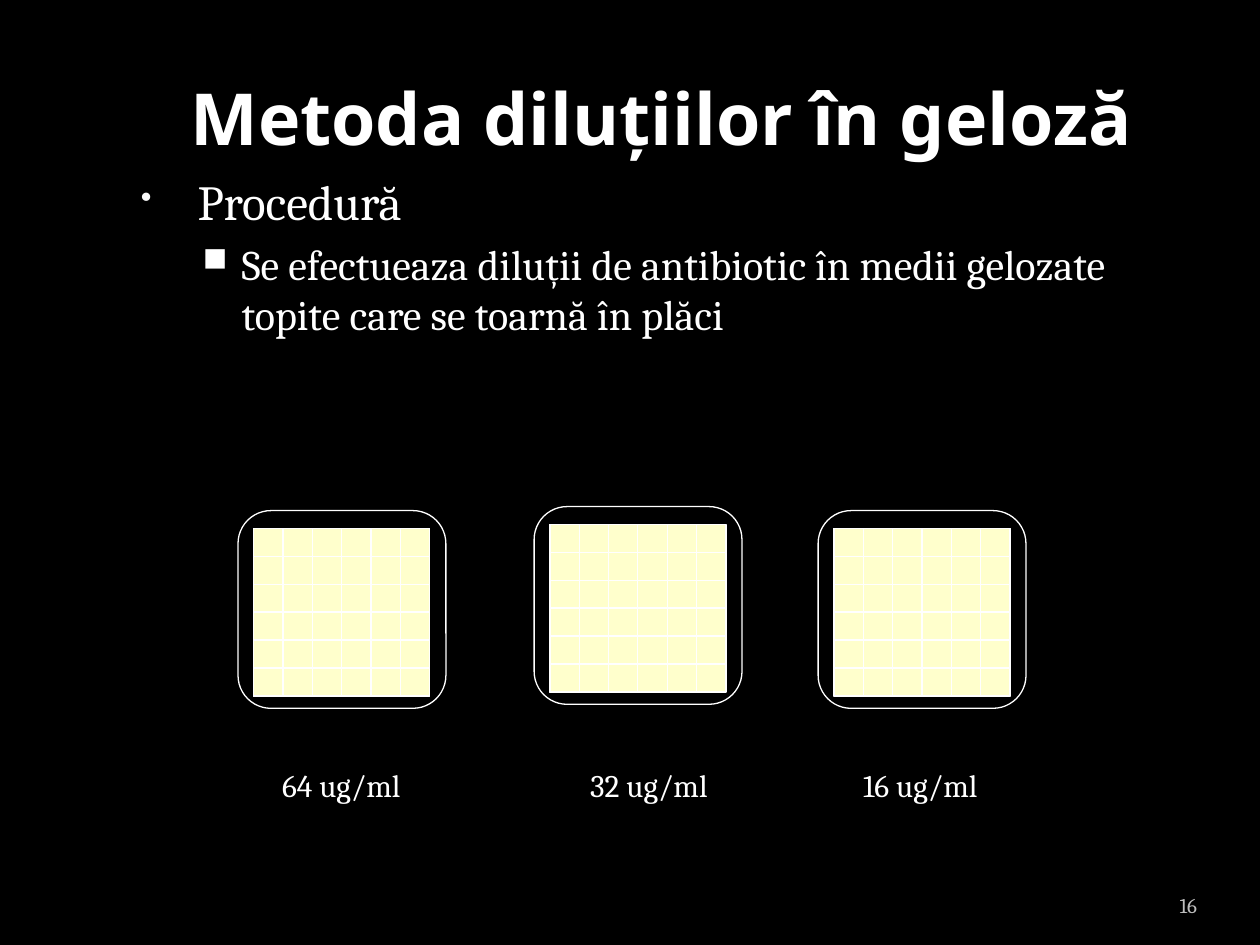
from lxml import etree
from pptx import Presentation
from pptx.dml.color import RGBColor
from pptx.enum import shapes, text
from pptx.oxml import ns
from pptx.util import Pt

COLORS = {"background": "000000", "ink": "FFFFFF", "bullet": "F9F9F9",
          "agar": "FFFFCC", "page": "BDBDBD"}
SERIF, SANS = "Cambria", "Noto Sans"
GRID_CELLS = 6
AGAR_WIDTH, AGAR_HEIGHT = 100.6, 95.8


def rgb(name):
    return RGBColor.from_string(COLORS[name])


def add_property(parent, tag, **attributes):
    """Append a DrawingML child element and return it."""
    return etree.SubElement(parent, ns.qn(tag), attributes)


def style_font(paragraph, size, name=SERIF, color="ink", bold=False):
    font = paragraph.font
    font.size, font.name, font.bold = Pt(size), name, bold
    font.color.rgb = rgb(color)


def add_text_frame(slide, left, top, width, height,
                   anchor=text.MSO_ANCHOR.TOP):
    box = slide.shapes.add_textbox(Pt(left), Pt(top), Pt(width), Pt(height))
    frame = box.text_frame
    frame.word_wrap = True
    frame.vertical_anchor = anchor
    return frame


def add_bullet(paragraph, wording, size, margin, indent, sign, sign_size, color):
    paragraph.text = wording
    paragraph.space_before = Pt(size * 0.2)
    properties = paragraph._p.get_or_add_pPr()
    properties.set("marL", str(Pt(margin)))
    properties.set("indent", str(Pt(indent)))
    bullet_color = add_property(properties, "a:buClr")
    add_property(bullet_color, "a:srgbClr", val=COLORS[color])
    add_property(properties, "a:buSzPct", val=str(sign_size * 1000))
    add_property(properties, "a:buChar", char=sign)
    style_font(paragraph, size)


def add_panel(group, preset, left, top, width, height, fill=None):
    """Add an outlined shape, hollow when no fill is given."""
    panel = group.shapes.add_shape(preset, Pt(left), Pt(top), Pt(width), Pt(height))
    panel.shadow.inherit = False
    if fill:
        panel.fill.solid()
        panel.fill.fore_color.rgb = rgb(fill)
    else:
        panel.fill.background()
    panel.line.color.rgb = rgb("ink")
    panel.line.width = Pt(0.75)
    return panel


def add_grid_line(group, x1, y1, x2, y2):
    line = group.shapes.add_connector(
        shapes.MSO_CONNECTOR.STRAIGHT, Pt(x1), Pt(y1), Pt(x2), Pt(y2))
    line.line.color.rgb = rgb("ink")
    line.line.width = Pt(0.75)
    add_property(line._element.spPr, "a:effectLst")
    return line


def add_plate(slide, left, top):
    """Draw a culture plate: rounded dish, agar and its inoculation grid."""
    group = slide.shapes.add_group_shape()
    add_panel(group, shapes.MSO_SHAPE.ROUNDED_RECTANGLE,
              left, top, 118.8, 113, "background")
    x, y = left + 9, top + 10.1
    right, bottom = x + AGAR_WIDTH, y + AGAR_HEIGHT
    agar = add_panel(group, shapes.MSO_SHAPE.RECTANGLE,
                     x, y, AGAR_WIDTH, AGAR_HEIGHT, "agar")
    offset = (AGAR_WIDTH - AGAR_HEIGHT) / 2
    frame = add_panel(group, shapes.MSO_SHAPE.RECTANGLE,
                      x + offset, y - offset, AGAR_HEIGHT, AGAR_WIDTH)
    frame.rotation = 90
    for step in range(1, GRID_CELLS):
        row_y = y + AGAR_HEIGHT * step / GRID_CELLS
        column_x = x + AGAR_WIDTH * step / GRID_CELLS
        row = add_grid_line(group, x, row_y, right, row_y)
        column = add_grid_line(group, column_x, y, column_x, bottom)
        if step * 2 == GRID_CELLS:
            row.begin_connect(agar, 1)
            row.end_connect(agar, 3)
            column.begin_connect(agar, 0)
            column.end_connect(agar, 2)


def add_title(slide):
    frame = add_text_frame(slide, 72, 21.6, 612, 90, text.MSO_ANCHOR.MIDDLE)
    title = frame.paragraphs[0]
    title.text = "Metoda diluțiilor în geloză"
    title.alignment = text.PP_ALIGN.CENTER
    style_font(title, 41, SANS, bold=True)


def add_procedure(slide):
    frame = add_text_frame(slide, 62.6, 94.3, 611.3, 356.4)
    add_bullet(frame.paragraphs[0], "Procedură", 28, 43.2, -32.4, "•", 65, "bullet")
    step = frame.add_paragraph()
    step.level = 1
    add_bullet(step, "Se efectueaza diluții de antibiotic în medii gelozate "
               "topite care se toarnă în plăci", 24, 68.4, -22.3, "■", 80, "ink")


def add_concentrations(slide):
    """Write the three plate labels on one line, spaced by tab stops."""
    frame = add_text_frame(slide, 110.2, 434.2, 493.2, 28.8)
    frame.margin_left = Pt(51)
    labels = frame.paragraphs[0]
    labels.text = "64 ug/ml\t32 ug/ml\t16 ug/ml"
    stops = add_property(labels._p.get_or_add_pPr(), "a:tabLst")
    for position in (176, 332):
        add_property(stops, "a:tab", pos=str(Pt(position)), algn="l")
    style_font(labels, 18)


def add_page_number(slide):
    frame = add_text_frame(slide, 534.2, 491.8, 149.8, 36, text.MSO_ANCHOR.BOTTOM)
    frame.margin_left = frame.margin_right = 0
    number = frame.paragraphs[0]
    number.text = "16"
    number.alignment = text.PP_ALIGN.RIGHT
    style_font(number, 12, color="page")


def main():
    deck = Presentation()
    deck.slide_width, deck.slide_height = Pt(720), Pt(540)
    slide = deck.slides.add_slide(deck.slide_layouts[6])
    slide.background.fill.solid()
    slide.background.fill.fore_color.rgb = rgb("background")
    add_page_number(slide)
    add_title(slide)
    add_procedure(slide)
    for left, top in ((136, 291.8), (305.2, 289.5), (467.5, 291.8)):
        add_plate(slide, left, top)
    add_concentrations(slide)
    deck.save("out.pptx")


if __name__ == "__main__":
    main()
